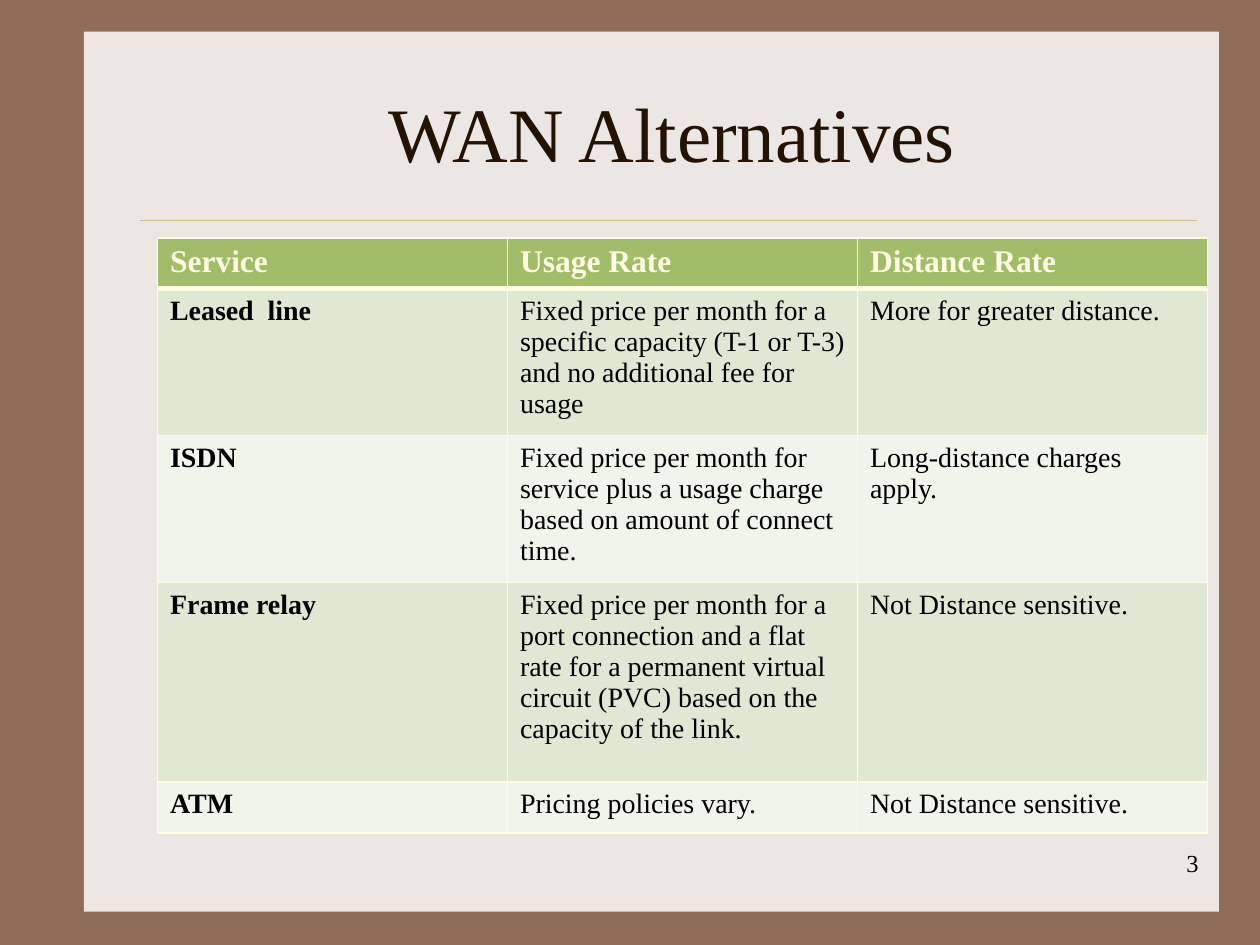
"""Build the WAN Alternatives slide with its pricing table."""
from dataclasses import dataclass
from lxml.etree import SubElement
from pptx import Presentation
from pptx.dml.color import RGBColor
from pptx.enum.shapes import MSO_CONNECTOR as Connector, MSO_SHAPE as Shape
from pptx.enum.text import MSO_ANCHOR as Anchor, PP_ALIGN as Align
from pptx.oxml.ns import qn
from pptx.util import Pt

TITLE = "WAN Alternatives"
PAGE_NUMBER = "3"
ROWS = [
    ("Service", "Usage Rate", "Distance Rate"),
    ("Leased  line",
     "Fixed price per month for a specific capacity (T-1 or T-3) and no additional fee for usage",
     "More for greater distance."),
    ("ISDN",
     "Fixed price per month for service plus a usage charge based on amount of connect time.",
     "Long-distance charges apply."),
    ("Frame relay",
     "Fixed price per month for a port connection and a flat rate for a permanent virtual "
     "circuit (PVC) based on the capacity of the link.",
     "Not Distance sensitive."),
    ("ATM", "Pricing policies vary.", "Not Distance sensitive."),
]
ROW_HEIGHTS = [29, 78.3, 78.3, 114, 29]
TABLE_LEFT, TABLE_TOP, COLUMN_WIDTH = 90, 136, 200


@dataclass(frozen=True)
class Theme:
    font: str = "Times New Roman"
    frame: str = "906D58"
    paper: str = "EDE7E3"
    rule: str = "CBBD83"
    title: str = "221304"
    text: str = "000000"
    cream: str = "FEFDE3"
    header: str = "A1BD69"
    bands: tuple = ("E0E8D4", "F0F4EB")
    title_size: int = 44
    header_size: int = 18
    body_size: int = 16
    number_size: int = 14


THEME = Theme()


def paint(fill, color):
    fill.solid()
    fill.fore_color.rgb = RGBColor.from_string(color)


def write(frame, text, size, color, align=Align.LEFT, bold=False):
    para = frame.paragraphs[0]
    para.alignment = align
    span = para.add_run()
    span.text = text
    span.font.name = THEME.font
    span.font.size = Pt(size)
    span.font.bold = bold
    span.font.color.rgb = RGBColor.from_string(color)


def add_text(page, bounds, anchor, *style):
    frame = page.shapes.add_textbox(*map(Pt, bounds)).text_frame
    frame.word_wrap = True
    frame.vertical_anchor = anchor
    write(frame, *style)


def add_border(cell, side, width):
    properties = cell._tc.get_or_add_tcPr()
    line = SubElement(properties, qn(f"a:ln{side}"), w=str(Pt(width)))
    fill = SubElement(line, qn("a:solidFill"))
    SubElement(fill, qn("a:srgbClr"), val=THEME.cream)


def add_backdrop(page):
    paint(page.background.fill, THEME.frame)
    paper = page.shapes.add_shape(Shape.RECTANGLE, Pt(48), Pt(18), Pt(648.5), Pt(503))
    paper.shadow.inherit = False
    paint(paper.fill, THEME.paper)
    paper.line.fill.background()
    rule = page.shapes.add_connector(Connector.STRAIGHT, Pt(80), Pt(126), Pt(684), Pt(126))
    rule.line.width = Pt(0.25)
    rule.line.color.rgb = RGBColor.from_string(THEME.rule)
    SubElement(rule._element.spPr, qn("a:effectLst"))


def add_rates(page):
    columns = len(ROWS[0])
    table = page.shapes.add_table(
        len(ROWS), columns, Pt(TABLE_LEFT), Pt(TABLE_TOP),
        Pt(columns * COLUMN_WIDTH), Pt(sum(ROW_HEIGHTS))).table
    for column in table.columns:
        column.width = Pt(COLUMN_WIDTH)
    for r, (texts, height) in enumerate(zip(ROWS, ROW_HEIGHTS)):
        table.rows[r].height = Pt(height)
        is_header = r == 0
        size = THEME.header_size if is_header else THEME.body_size
        color = THEME.cream if is_header else THEME.text
        fill = THEME.header if is_header else THEME.bands[(r - 1) % 2]
        widths = {"L": 1, "R": 1, "T": 3 if r == 1 else 1, "B": 3 if is_header else 1}
        for c, text in enumerate(texts):
            cell = table.cell(r, c)
            for side, width in widths.items():
                add_border(cell, side, width)
            paint(cell.fill, fill)
            write(cell.text_frame, text, size, color, bold=is_header or c == 0)


def main():
    deck = Presentation()
    deck.slide_width, deck.slide_height = Pt(720), Pt(540)
    page = deck.slides.add_slide(deck.slide_layouts[6])
    add_backdrop(page)
    add_text(page, (84, 30, 600, 90), Anchor.MIDDLE,
             TITLE, THEME.title_size, THEME.title, Align.CENTER)
    add_rates(page)
    add_text(page, (542, 481, 150, 36), Anchor.TOP,
             PAGE_NUMBER, THEME.number_size, THEME.text, Align.RIGHT)
    deck.save("out.pptx")


if __name__ == "__main__":
    main()
